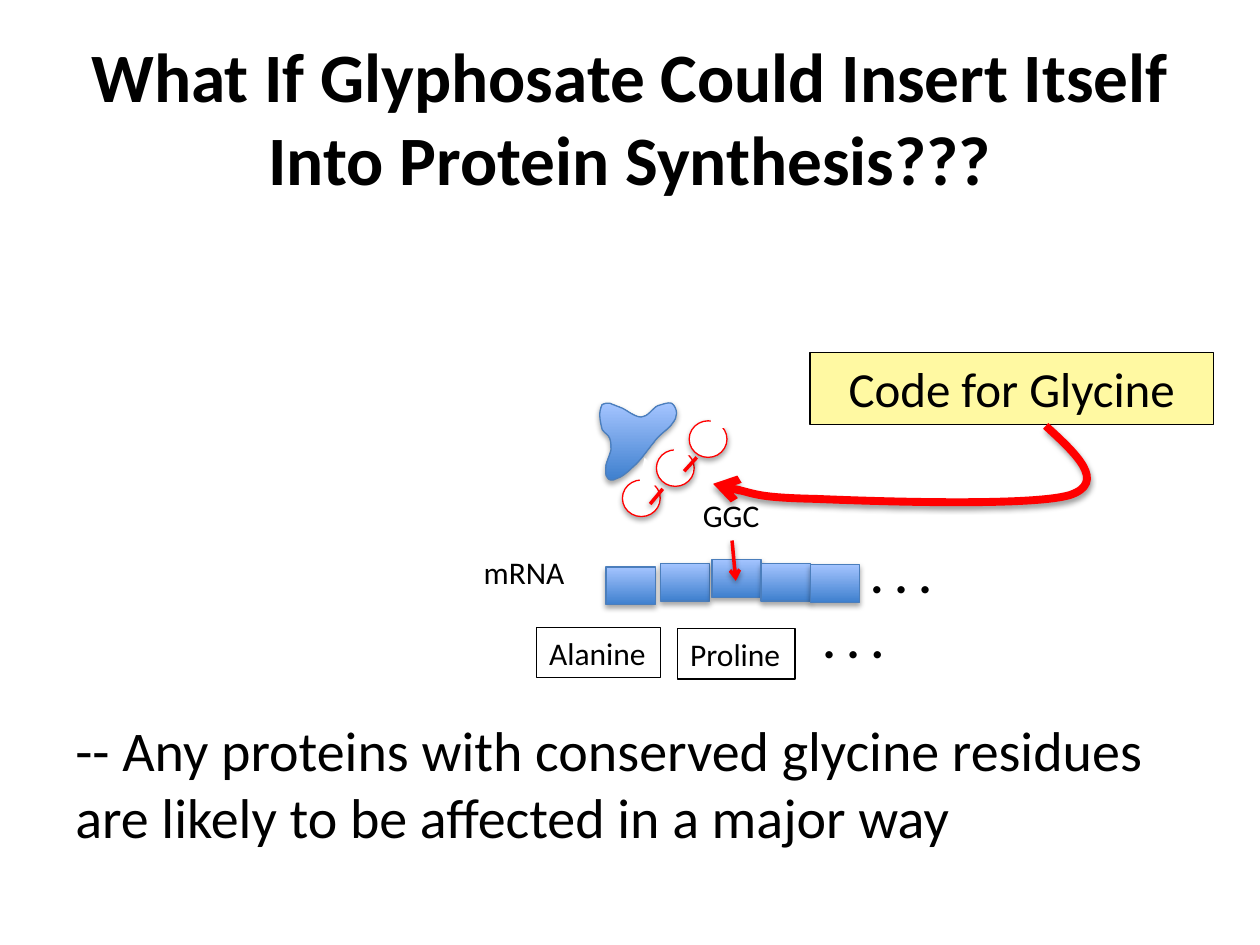
from typing import NamedTuple, Optional

from lxml import etree
from pptx import Presentation
from pptx.dml.color import RGBColor
from pptx.enum.shapes import MSO_CONNECTOR, MSO_SHAPE
from pptx.enum.text import MSO_ANCHOR, MSO_AUTO_SIZE, PP_ALIGN
from pptx.oxml.ns import qn
from pptx.util import Emu, Inches, Pt

RECT, OVAL = MSO_SHAPE.RECTANGLE, MSO_SHAPE.OVAL
TRIANGLE = MSO_SHAPE.ISOSCELES_TRIANGLE
STRAIGHT = MSO_CONNECTOR.STRAIGHT
LEFT, CENTER = PP_ALIGN.LEFT, PP_ALIGN.CENTER
MIDDLE, TOP = MSO_ANCHOR.MIDDLE, MSO_ANCHOR.TOP
NO_FIT = MSO_AUTO_SIZE.NONE

BLACK = RGBColor(0x00, 0x00, 0x00)
WHITE = RGBColor(0xFF, 0xFF, 0xFF)
RED = RGBColor(0xFF, 0x00, 0x00)
YELLOW = RGBColor(0xFF, 0xF9, 0xA2)
BLUE_DARK = RGBColor(0x3F, 0x80, 0xCE)
BLUE_LIGHT = RGBColor(0xA4, 0xC4, 0xFF)
BLUE_EDGE = RGBColor(0x4B, 0x7E, 0xBC)
FONT = "Calibri"

# The slide is a grid of 100 columns by 75 rows
prs = Presentation()
prs.slide_width, prs.slide_height = Inches(10), Inches(7.5)
UNIT = prs.slide_width / 100
slide = prs.slides.add_slide(prs.slide_layouts[5])
shapes = slide.shapes


class Box(NamedTuple):
    col: float
    row: float
    cols: float
    rows: float

    def emu(self) -> list[Emu]:
        return [grid(n) for n in self]


class Label(NamedTuple):
    text: str
    box: Box
    size: float = 18
    bold: bool = False
    fill: Optional[RGBColor] = None
    edge: Optional[RGBColor] = None
    align: PP_ALIGN = LEFT
    wrap: bool = False


def grid(n: float) -> Emu:
    return Emu(round(n * UNIT))


def set_text(sp, text: str, size: float, bold: bool = False, align=LEFT,
             anchor=TOP, wrap: bool = True) -> None:
    tf = sp.text_frame
    tf.text = text
    tf.word_wrap, tf.auto_size, tf.vertical_anchor = wrap, NO_FIT, anchor
    p = tf.paragraphs[0]
    p.alignment = align
    font = p.runs[0].font
    font.name, font.size, font.bold = FONT, Pt(size), bold
    font.color.rgb = BLACK


def set_line(sp, color: RGBColor, width: float, arrow: bool = False) -> None:
    sp.line.color.rgb, sp.line.width = color, Pt(width)
    if arrow:
        etree.SubElement(sp.line._get_or_add_ln(), qn("a:tailEnd"), type="arrow")


def add_shadow(sp, alpha: int = 35, dist: float = 1.8) -> None:
    effects = etree.SubElement(sp._element.spPr, qn("a:effectLst"))
    outer = etree.SubElement(effects, qn("a:outerShdw"), blurRad=str(Pt(3.1)),
                             dist=str(Pt(dist)), dir="5400000", rotWithShape="0")
    color = etree.SubElement(outer, qn("a:srgbClr"), val=str(BLACK))
    etree.SubElement(color, qn("a:alpha"), val=str(alpha * 1000))


def style_blue(sp) -> None:
    sp.fill.gradient()
    sp.fill.gradient_angle = 90
    for stop, color in zip(sp.fill.gradient_stops, (BLUE_DARK, BLUE_LIGHT)):
        stop.color.rgb = color
    set_line(sp, BLUE_EDGE, 0.75)
    add_shadow(sp)


def add_label(label: Label):
    sp = shapes.add_textbox(*label.box.emu())
    if label.fill is not None:
        sp.fill.solid()
        sp.fill.fore_color.rgb = label.fill
    if label.edge is not None:
        set_line(sp, label.edge, 0.75)
    set_text(sp, label.text, label.size, label.bold, label.align, wrap=label.wrap)
    return sp


def add_line(start: tuple, end: tuple, arrow: bool = False):
    line = shapes.add_connector(STRAIGHT, *(grid(n) for n in start + end))
    set_line(line, RED, 2, arrow)
    add_shadow(line, 38, 1.6)
    return line


def add_curve(box: Box, start: tuple, beziers: list[tuple], closed: bool):
    """Outline of cubic segments, in tenths of a grid unit."""
    x, y, w, h = (round(n * 10) for n in box)
    builder = shapes.build_freeform(x, y, scale=UNIT / 10)
    builder.add_line_segments([(x + w, y), (x + w, y + h), (x, y + h)], close=closed)
    sp = builder.convert_to_shape()
    outline = sp._element.spPr.find(".//" + qn("a:path"))
    for step in list(outline):
        outline.remove(step)
    for tag, coords in [("a:moveTo", start)] + [("a:cubicBezTo", b) for b in beziers]:
        step = etree.SubElement(outline, qn(tag))
        for px, py in zip(coords[::2], coords[1::2]):
            etree.SubElement(step, qn("a:pt"), x=str(px - x), y=str(py - y))
    if closed:
        etree.SubElement(outline, qn("a:close"))
    return sp


def add_ring(box: Box, notch: tuple) -> None:
    """Red circle with a white wedge that opens it at the upper right."""
    ring = shapes.add_shape(OVAL, *box.emu())
    wedge = shapes.add_shape(TRIANGLE, *Box(*notch, 2.8, 2.1).emu())
    for sp in (ring, wedge):
        sp.fill.solid()
        sp.fill.fore_color.rgb = WHITE
    set_line(ring, RED, 0.75)
    add_shadow(ring)
    wedge.rotation = 225
    wedge.line.fill.background()
    wedge.shadow.inherit = False


# Title
title = shapes.title
title.left, title.top, title.width, title.height = Box(5, 3, 90, 12.5).emu()
set_text(title, "What If Glyphosate Could Insert Itself Into Protein Synthesis???",
         39.6, True, CENTER, MIDDLE)

# mRNA strand
for col, row in [(48.1, 45), (52.4, 44.7), (56.5, 44.4), (60.4, 44.7), (64.3, 44.8)]:
    style_blue(shapes.add_shape(RECT, *Box(col, row, 3.9, 3).emu()))

# Codon and strand labels, with the pointer into the strand
codon = add_label(Label("GGC", Box(54.8, 38.9, 6.6, 4), fill=WHITE))
add_label(Label("mRNA", Box(37.4, 43.4, 8.5, 4), fill=WHITE))
pointer = add_line((58.1, 42.9), (58.4, 46.1), arrow=True)
pointer.begin_connect(codon, 2)

# Amino acids, conclusion and ellipses
for label in [
    Label("Alanine", Box(42.6, 49.8, 9.8, 4), edge=BLACK),
    Label("Proline", Box(53.8, 49.9, 9.3, 4), edge=BLACK),
    Label("-- Any proteins with conserved glycine residues are likely to be "
          "affected in a major way", Box(5, 56.3, 90, 13.8), 32, wrap=True),
    Label(". . .", Box(64.3, 47.9, 6.9, 5.7), 28, True),
    Label(". . .", Box(68.1, 42.7, 6.9, 5.7), 28, True),
]:
    add_label(label)

# Transfer molecule: body, rings and links
style_blue(add_curve(Box(47.6, 32, 6.1, 6.1), (478, 321), [
    (477, 323, 476, 326, 476, 329), (476, 333, 477, 337, 478, 341),
    (480, 344, 483, 345, 484, 348), (485, 351, 485, 354, 485, 357),
    (484, 361, 482, 365, 481, 369), (481, 373, 480, 377, 482, 379),
    (483, 381, 486, 382, 489, 380), (493, 379, 498, 375, 503, 370),
    (508, 366, 514, 357, 519, 351), (523, 345, 530, 341, 533, 337),
    (536, 333, 537, 331, 537, 328), (537, 325, 535, 321, 533, 320),
    (530, 319, 526, 321, 522, 322), (518, 324, 514, 331, 509, 331),
    (504, 331, 498, 326, 494, 324), (489, 322, 486, 321, 484, 320),
    (481, 320, 480, 320, 478, 321)], closed=True))
for col, row, notch in [(49.4, 38.1, (50, 37)), (52.1, 35.7, (52.7, 34.6)),
                        (54.7, 33.4, (55.6, 32.4))]:
    add_ring(Box(col, row, 3, 2.9), notch)
add_line((51.6, 40), (52.6, 38.8))
add_line((54.3, 37.4), (55.3, 36.3))

# Callout and its curved arrow
add_label(Label("Code for Glycine", Box(64.3, 28, 32, 5.7), 28, fill=YELLOW,
                edge=BLACK, align=CENTER, wrap=True))
arrow = add_curve(Box(56.6, 33.8, 29.7, 6.1), (830, 338), [
    (854, 360, 879, 383, 849, 393), (818, 402, 695, 398, 648, 396),
    (601, 395, 566, 384, 566, 384)], closed=False)
arrow.fill.background()
set_line(arrow, RED, 4.5, arrow=True)
add_shadow(arrow, 38, 1.6)

prs.save("out.pptx")
